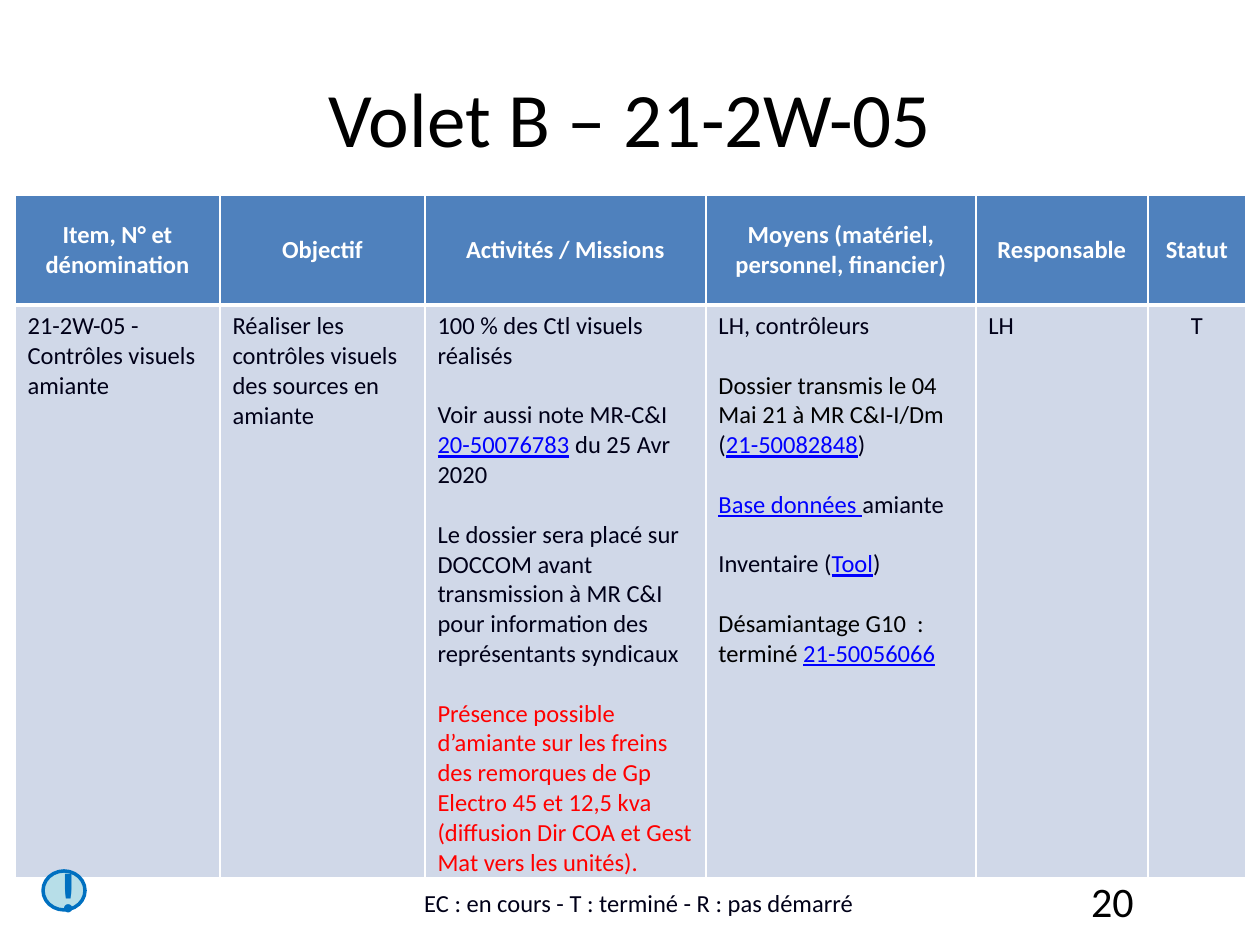
from dataclasses import dataclass
from lxml.etree import SubElement as Sub
from pptx import Presentation
from pptx.dml.color import RGBColor as RGB
from pptx.enum.shapes import MSO_SHAPE as Shape
from pptx.enum.text import MSO_ANCHOR as Anchor, PP_ALIGN as Align
from pptx.oxml.ns import qn
from pptx.util import Pt

PX = 914400 / 126


@dataclass(frozen=True)
class Theme:
    font: str = "Calibri"
    black: str = "000000"
    ink: str = "000018"
    white: str = "FFFFFF"
    link: str = "0000FF"
    alert: str = "FF0000"
    head: str = "4F81BD"
    body: str = "D0D8E8"
    badge: str = "B7DEE8"
    rim: str = "0070C0"
    title: int = 44
    mark: int = 32
    page: int = 24
    text: int = 14
    gap: int = 17


T = Theme()


def px(*nums):
    return [round(n * PX) for n in nums]


def write(frame, paras, size, color, align=Align.LEFT, bold=False):
    """Fill a frame with paragraphs, each a list of (text, colour) runs or plain text."""
    frame.word_wrap = True
    for i, para in enumerate(paras):
        p = frame.add_paragraph() if i else frame.paragraphs[0]
        p.alignment = align
        if i:
            p.space_before = Pt(T.gap)
        for text, tone in [(para, color)] if isinstance(para, str) else para:
            run = p.add_run()
            run.text = text
            font = run.font
            font.name, font.size, font.bold = T.font, Pt(size), bold
            font.color.rgb = RGB.from_string(tone)
            font.underline = tone == T.link


prs = Presentation()
prs.slide_width, prs.slide_height = px(1260, 945)
slide = prs.slides.add_slide(prs.slide_layouts[6])
shapes = slide.shapes

# Title, page number and legend
labels = [
    ((63, 38, 1134, 157), "Volet B – 21-2W-05", T.title, T.black, Align.CENTER, Anchor.MIDDLE),
    ((903, 876, 243, 50), "20", T.page, T.black, Align.RIGHT, Anchor.MIDDLE),
    ((292, 876, 694, 48), "EC : en cours - T : terminé - R : pas démarré",
     T.text, T.ink, Align.CENTER, Anchor.BOTTOM),
]
for area, text, size, color, align, anchor in labels:
    frame = shapes.add_textbox(*px(*area)).text_frame
    frame.vertical_anchor = anchor
    write(frame, [text], size, color, align)

# Action table
heads = ["Item, N° et dénomination", "Objectif", "Activités / Missions",
         "Moyens (matériel, personnel, financier)", "Responsable", "Statut"]
tasks = [
    "100 % des Ctl visuels réalisés",
    [("Voir aussi note MR-C&I ", T.ink), ("20-50076783", T.link), (" du 25 Avr 2020", T.ink)],
    "Le dossier sera placé sur DOCCOM avant transmission à MR C&I "
    "pour information des représentants syndicaux",
    [("Présence possible d’amiante sur les freins des remorques de Gp Electro 45 "
      "et 12,5 kva (diffusion Dir COA et Gest Mat vers les unités).", T.alert)],
]
means = [
    "LH, contrôleurs",
    [("Dossier transmis le 04 Mai 21 à MR C&I-I/Dm ", T.black), ("(", T.ink),
     ("21-50082848", T.link), (")", T.ink)],
    [("Base données ", T.link), ("amiante", T.ink)],
    [("Inventaire (", T.ink), ("Tool", T.link), (")", T.ink)],
    [("Désamiantage G10  : terminé ", T.black), ("21-50056066", T.link)],
]
items = [["21-2W-05 - Contrôles visuels amiante"],
         ["Réaliser les contrôles visuels des sources en amiante"],
         tasks, means, ["LH"], ["T"]]
widths = [205, 205, 281, 270, 172, 98]
heights = [110, 571]

table = shapes.add_table(2, len(heads), *px(15, 195, sum(widths), sum(heights))).table
for col, width in zip(table.columns, px(*widths)):
    col.width = width
for row, height in zip(table.rows, px(*heights)):
    row.height = height

for r, row in enumerate([[[h] for h in heads], items]):
    for c, paras in enumerate(row):
        cell = table.cell(r, c)
        top = r == 0
        mid = top or c == len(heads) - 1
        cell.vertical_anchor = Anchor.MIDDLE if top else Anchor.TOP
        write(cell.text_frame, paras, T.text, T.white if top else T.ink,
              Align.CENTER if mid else Align.LEFT, top)
        props = cell._tc.get_or_add_tcPr()
        for side in "LRTB":
            thick = 3 if (r, side) in [(0, "B"), (1, "T")] else 1
            line = Sub(props, qn(f"a:ln{side}"), w=str(Pt(thick)))
            Sub(Sub(line, qn("a:solidFill")), qn("a:srgbClr"), val=T.white)
        cell.fill.solid()
        cell.fill.fore_color.rgb = RGB.from_string(T.head if top else T.body)

# Attention badge
badge = shapes.add_shape(Shape.FLOWCHART_CONNECTOR, *px(43, 871, 42, 39))
badge.shadow.inherit = False
badge.fill.solid()
badge.fill.fore_color.rgb = RGB.from_string(T.badge)
badge.line.color.rgb = RGB.from_string(T.rim)
badge.line.width = Pt(2)
frame = badge.text_frame
frame.margin_left, frame.margin_right, frame.margin_top, frame.margin_bottom = px(10, 0, 0, 0)
frame.vertical_anchor = Anchor.MIDDLE
write(frame, ["!"], T.mark, T.rim, Align.CENTER, True)
frame.word_wrap = False

prs.save("out.pptx")
